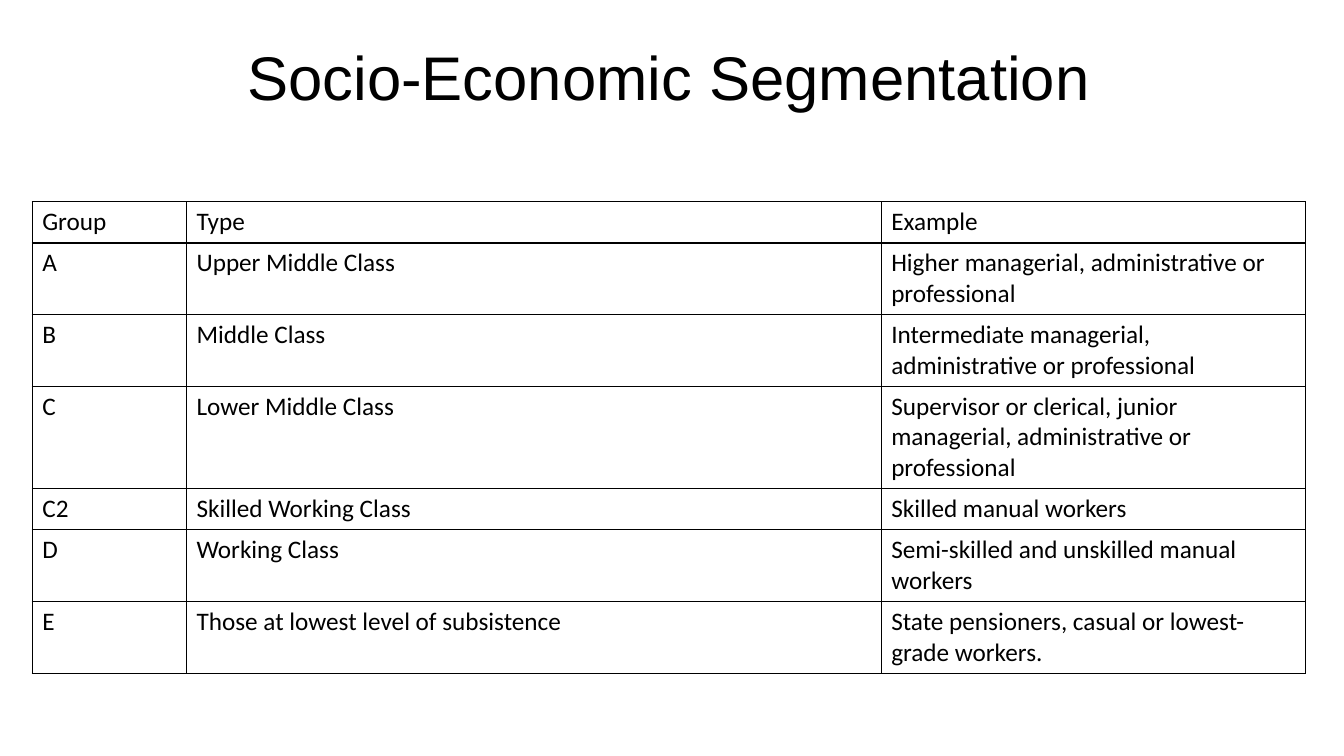
from lxml.etree import SubElement
from pptx import Presentation
from pptx.dml.color import RGBColor
from pptx.enum.text import MSO_ANCHOR, PP_ALIGN
from pptx.oxml.ns import qn
from pptx.util import Inches, Pt

COLORS = {"ink": "000000"}
COLUMN_WIDTHS = [1.53, 6.89, 4.21]
ROW_HEIGHT = 0.41
SEGMENTS = [
    ("Group", "Type", "Example"),
    ("A", "Upper Middle Class", "Higher managerial, administrative or professional"),
    ("B", "Middle Class", "Intermediate managerial, administrative or professional"),
    ("C", "Lower Middle Class",
     "Supervisor or clerical, junior managerial, administrative or professional"),
    ("C2", "Skilled Working Class", "Skilled manual workers"),
    ("D", "Working Class", "Semi-skilled and unskilled manual workers"),
    ("E", "Those at lowest level of subsistence",
     "State pensioners, casual or lowest-grade workers."),
]


def write_text(frame, text, font="Calibri", size=18, color="ink",
               align=PP_ALIGN.LEFT, line_spacing=None):
    frame.word_wrap = True
    paragraph = frame.paragraphs[0]
    paragraph.alignment = align
    paragraph.line_spacing = line_spacing
    run = paragraph.add_run()
    run.text = text
    run.font.name = font
    run.font.size = Pt(size)
    run.font.color.rgb = RGBColor.from_string(COLORS[color])


def add_cell_borders(cell, color="ink", width=1):
    """Draw all four sides; call before the fill is set, as the schema orders them."""
    properties = cell._tc.get_or_add_tcPr()
    for side in ("a:lnL", "a:lnR", "a:lnT", "a:lnB"):
        line = SubElement(properties, qn(side), w=str(Pt(width)))
        fill = SubElement(line, qn("a:solidFill"))
        SubElement(fill, qn("a:srgbClr"), val=COLORS[color])


def add_title(slide, text):
    box = slide.shapes.add_textbox(Inches(0.23), Inches(0.17), Inches(12.81), Inches(1.25))
    box.text_frame.vertical_anchor = MSO_ANCHOR.MIDDLE
    write_text(box.text_frame, text, font="Arial", size=44,
               align=PP_ALIGN.CENTER, line_spacing=0.9)


def add_segment_table(slide, rows):
    table = slide.shapes.add_table(
        len(rows), len(COLUMN_WIDTHS), Inches(0.32), Inches(2),
        Inches(sum(COLUMN_WIDTHS)), Inches(ROW_HEIGHT * len(rows))).table
    table.first_row = False
    table.horz_banding = False
    for column, width in zip(table.columns, COLUMN_WIDTHS):
        column.width = Inches(width)
    for row, texts in zip(table.rows, rows):
        row.height = Inches(ROW_HEIGHT)
        for cell, text in zip(row.cells, texts):
            add_cell_borders(cell)
            cell.fill.background()
            write_text(cell.text_frame, text)


def main():
    presentation = Presentation()
    presentation.slide_width = Inches(13.33)
    presentation.slide_height = Inches(7.5)
    slide = presentation.slides.add_slide(presentation.slide_layouts[6])
    add_segment_table(slide, SEGMENTS)
    add_title(slide, "Socio-Economic Segmentation")
    presentation.save("out.pptx")


if __name__ == "__main__":
    main()
